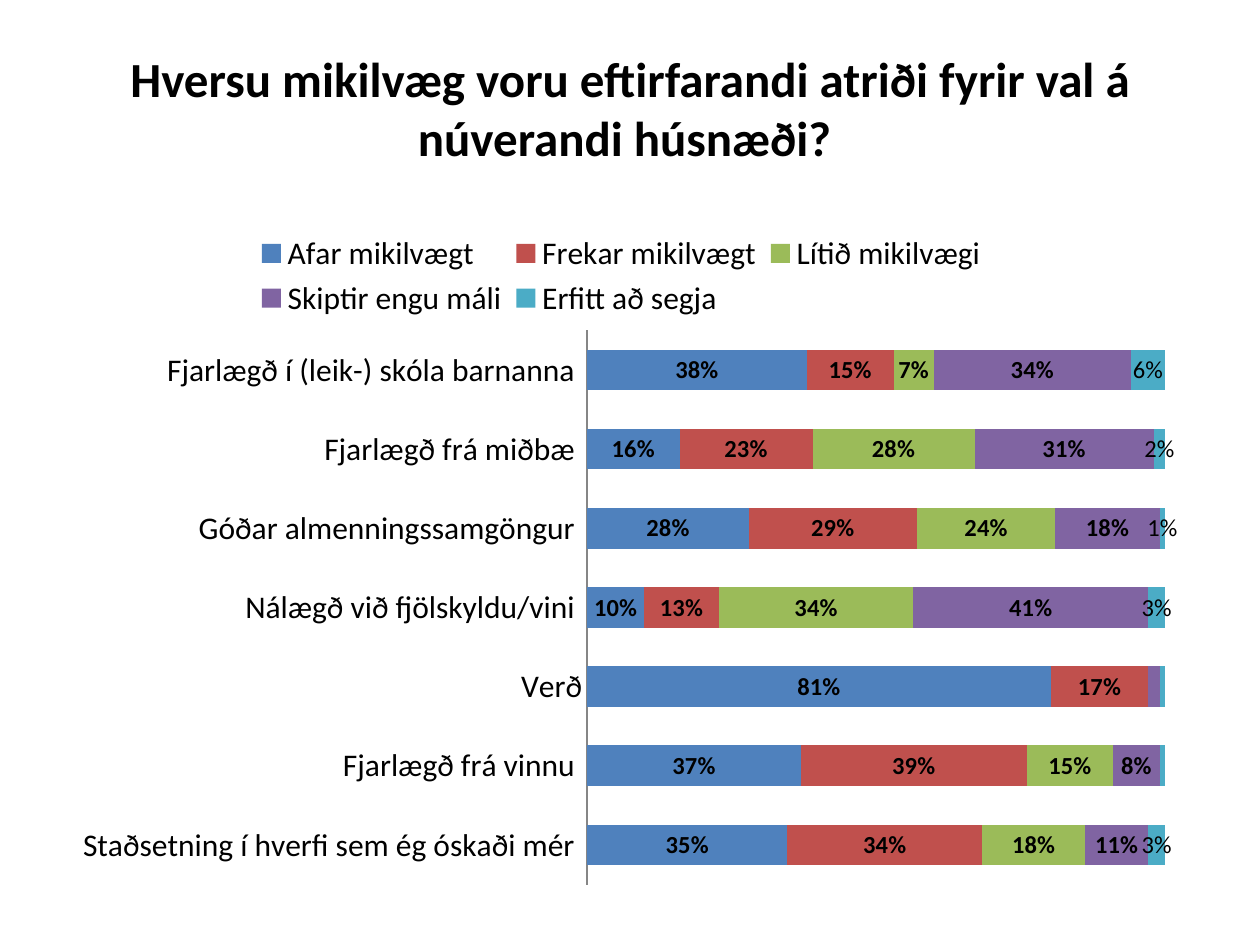
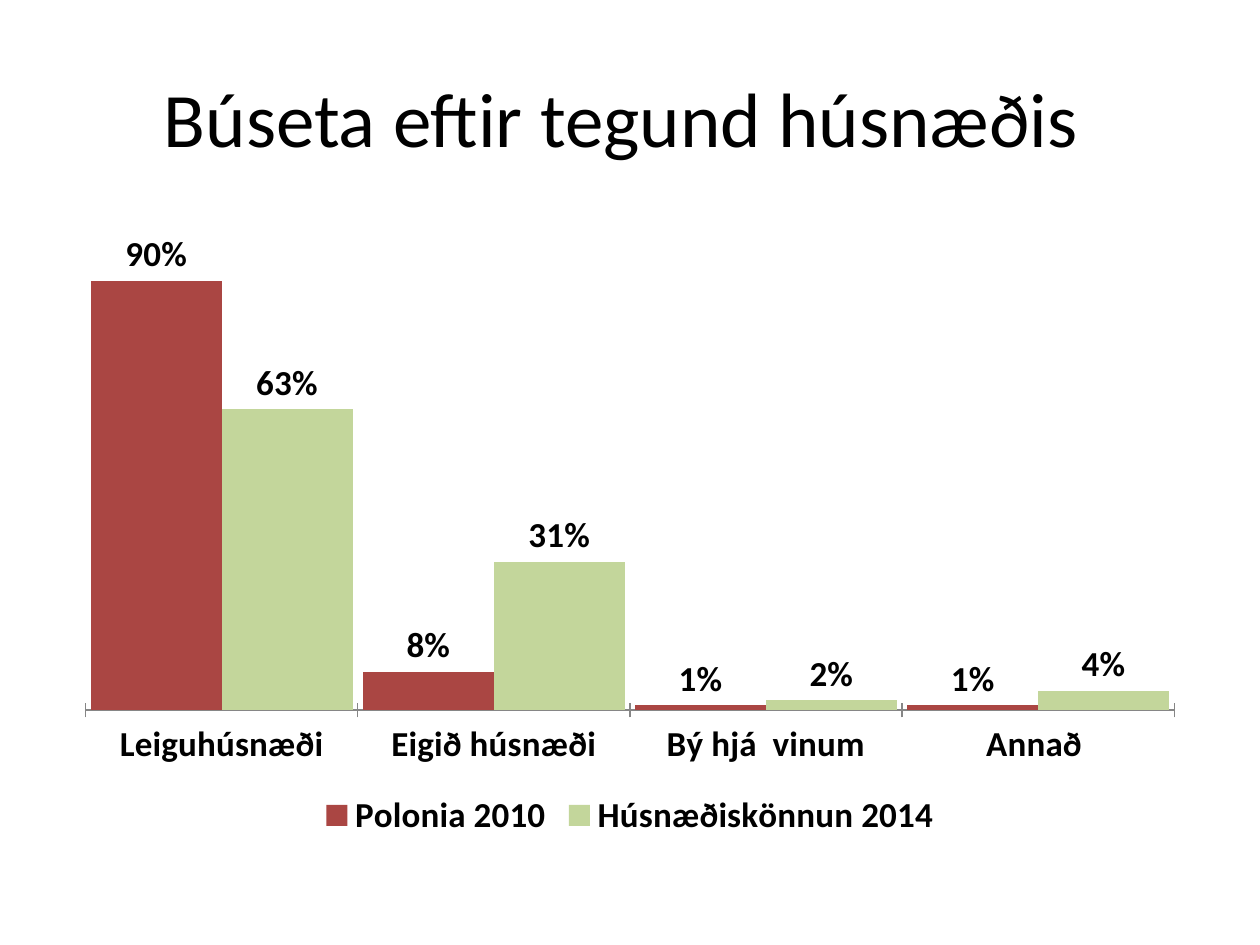
"""Build two survey slides, each with a title and a bar chart."""
from lxml import etree
from pptx import Presentation
from pptx.chart.data import CategoryChartData
from pptx.dml.color import RGBColor
from pptx.enum.chart import XL_CHART_TYPE as CT
from pptx.enum.chart import XL_LABEL_POSITION as LP
from pptx.enum.chart import XL_LEGEND_POSITION as LEGEND
from pptx.enum.chart import XL_TICK_LABEL_POSITION as TLP
from pptx.enum.chart import XL_TICK_MARK as TICK
from pptx.enum.text import MSO_ANCHOR, PP_ALIGN
from pptx.oxml.ns import qn
from pptx.util import Inches, Pt

FONT = "Calibri"
BLACK = RGBColor(0x00, 0x00, 0x00)
GRAY = RGBColor(0x86, 0x86, 0x86)
BLUE = RGBColor(0x4F, 0x81, 0xBD)
RED = RGBColor(0xC0, 0x50, 0x4D)
GREEN = RGBColor(0x9B, 0xBB, 0x59)
PURPLE = RGBColor(0x80, 0x64, 0xA2)
TEAL = RGBColor(0x4B, 0xAC, 0xC6)
DARK_RED = RGBColor(0xAA, 0x46, 0x43)
LIGHT_GREEN = RGBColor(0xC3, 0xD6, 0x9B)

FACTORS = [
    "Staðsetning í hverfi sem ég óskaði mér ", "Fjarlægð frá vinnu ", "Verð",
    "Nálægð við fjölskyldu/vini ", "Góðar almenningssamgöngur ",
    "Fjarlægð frá miðbæ ", "Fjarlægð í (leik-) skóla barnanna ",
]
IMPORTANCE = [
    ("Afar mikilvægt", (0.35, 0.37, 0.81, 0.1, 0.28, 0.16, 0.38), BLUE),
    ("Frekar mikilvægt", (0.34, 0.39, 0.17, 0.13, 0.29, 0.23, 0.15), RED),
    ("Lítið mikilvægi", (0.18, 0.15, 0, 0.34, 0.24, 0.28, 0.07), GREEN),
    ("Skiptir engu máli", (0.11, 0.08, 0.02, 0.41, 0.18, 0.31, 0.34), PURPLE),
    ("Erfitt að segja", (0.03, 0.01, 0.01, 0.03, 0.01, 0.02, 0.06), TEAL),
]
HOUSING = ["Leiguhúsnæði", "Eigið húsnæði", "Bý hjá  vinum", "Annað "]
SURVEYS = [
    ("Polonia 2010", (0.9, 0.08, 0.01, 0.01), DARK_RED),
    ("Húsnæðiskönnun 2014", (0.63, 0.31, 0.02, 0.04), LIGHT_GREEN),
]


def add_slide(prs, title, size, bold=False, bottom=0.05):
    """Add a title-only slide with a centred title."""
    s = prs.slides.add_slide(prs.slide_layouts[5])
    sp = s.shapes.title
    sp.left, sp.top, sp.width, sp.height = map(Inches, (0.5, 0.3, 9, 1.25))
    tf = sp.text_frame
    tf.text = title
    tf.vertical_anchor = MSO_ANCHOR.MIDDLE
    tf.margin_bottom = Inches(bottom)
    p = tf.paragraphs[0]
    p.alignment = PP_ALIGN.CENTER
    set_font(p.font, size, bold)
    return s


def set_font(font, size, bold=False):
    """Apply the shared typeface and colour."""
    font.name, font.size, font.bold = FONT, Pt(size), bold
    font.color.rgb = BLACK


def set_layout(parent, index, box, inner=False):
    """Place a chart part by fractions of the chart area."""
    for old in parent.findall(qn("c:layout")):
        parent.remove(old)
    layout = etree.Element(qn("c:layout"))
    manual = etree.SubElement(layout, qn("c:manualLayout"))
    settings = [("layoutTarget", "inner")] if inner else []
    settings += [("xMode", "edge"), ("yMode", "edge")]
    settings += zip("xywh", map(str, box))
    for tag, value in settings:
        etree.SubElement(manual, qn(f"c:{tag}")).set("val", value)
    parent.insert(index, layout)


def hide_labels(series, points):
    """Remove the data labels of the given points."""
    labels = series.data_labels._element
    for i, point in enumerate(points):
        label = etree.Element(qn("c:dLbl"))
        etree.SubElement(label, qn("c:idx")).set("val", str(point))
        etree.SubElement(label, qn("c:delete")).set("val", "1")
        labels.insert(i, label)


def label_series(series, size, position, bold=True):
    """Show the values of a series as percentages."""
    labels = series.data_labels
    labels.show_value = True
    labels.number_format, labels.number_format_is_linked = "0%", False
    labels.position = position
    set_font(labels.font, size, bold)


def add_bar_chart(s, kind, box, categories, rows, gap, overlap, plot_box,
                  legend_at, tick, size, bold=False):
    """Add a percentage chart without value axis or gridlines."""
    data = CategoryChartData(number_format="0%")
    data.categories = categories
    for name, values, _ in rows:
        data.add_series(name, values)
    chart = s.shapes.add_chart(kind, *map(Inches, box), data).chart
    set_font(chart.font, 10)
    chart.has_title = False
    chart.has_legend = True
    chart.legend.position = legend_at
    chart.legend.include_in_layout = False
    set_font(chart.legend.font, size, bold)

    value_axis = chart.value_axis
    value_axis.has_major_gridlines = False
    value_axis.minimum_scale, value_axis.maximum_scale = 0, 1
    value_axis.visible = False
    category_axis = chart.category_axis
    category_axis.major_tick_mark = tick
    category_axis.tick_label_position = TLP.NEXT_TO_AXIS
    category_axis.format.line.color.rgb = GRAY
    set_font(category_axis.tick_labels.font, size, bold)

    plot = chart.plots[0]
    plot.gap_width, plot.overlap = gap, overlap
    plot.vary_by_categories = False
    for series, (_, _, color) in zip(plot.series, rows):
        series.format.fill.solid()
        series.format.fill.fore_color.rgb = color
    set_layout(chart._chartSpace.chart.plotArea, 0, plot_box, inner=True)
    return chart


def add_importance_slide(prs):
    """Add the stacked chart of what mattered when choosing a home."""
    s = add_slide(prs, "Hversu mikilvæg voru eftirfarandi atriði fyrir val á "
                  "núverandi húsnæði? ", 28, bold=True, bottom=0.19)
    chart = add_bar_chart(
        s, CT.BAR_STACKED_100, (0.43, 1.7, 9, 5.43), FACTORS, IMPORTANCE,
        95, 100, (0.47, 0.17, 0.51, 0.81), LEGEND.TOP, TICK.NONE, 18)
    set_layout(chart.legend._element, 1, (0.17, 0.02, 0.66, 0.14))
    hidden = {"Lítið mikilvægi": [2], "Skiptir engu máli": [2],
              "Erfitt að segja": [1, 2]}
    for series in chart.plots[0].series:
        label_series(series, 14, LP.CENTER, series.name != "Erfitt að segja")
        hide_labels(series, hidden.get(series.name, []))


def add_housing_slide(prs):
    """Add the column chart comparing two surveys by housing type."""
    s = add_slide(prs, "Búseta eftir tegund húsnæðis ", 44)
    chart = add_bar_chart(
        s, CT.COLUMN_CLUSTERED, (0.5, 1.75, 9, 4.95), HOUSING, SURVEYS,
        8, 0, (0.02, 0.02, 0.96, 0.765), LEGEND.BOTTOM, TICK.CROSS, 20, True)
    for series in chart.plots[0].series:
        label_series(series, 20, LP.OUTSIDE_END)


def main():
    """Build and save the presentation."""
    prs = Presentation()
    prs.slide_width, prs.slide_height = Inches(10), Inches(7.5)
    add_importance_slide(prs)
    add_housing_slide(prs)
    prs.save("out.pptx")


if __name__ == "__main__":
    main()
